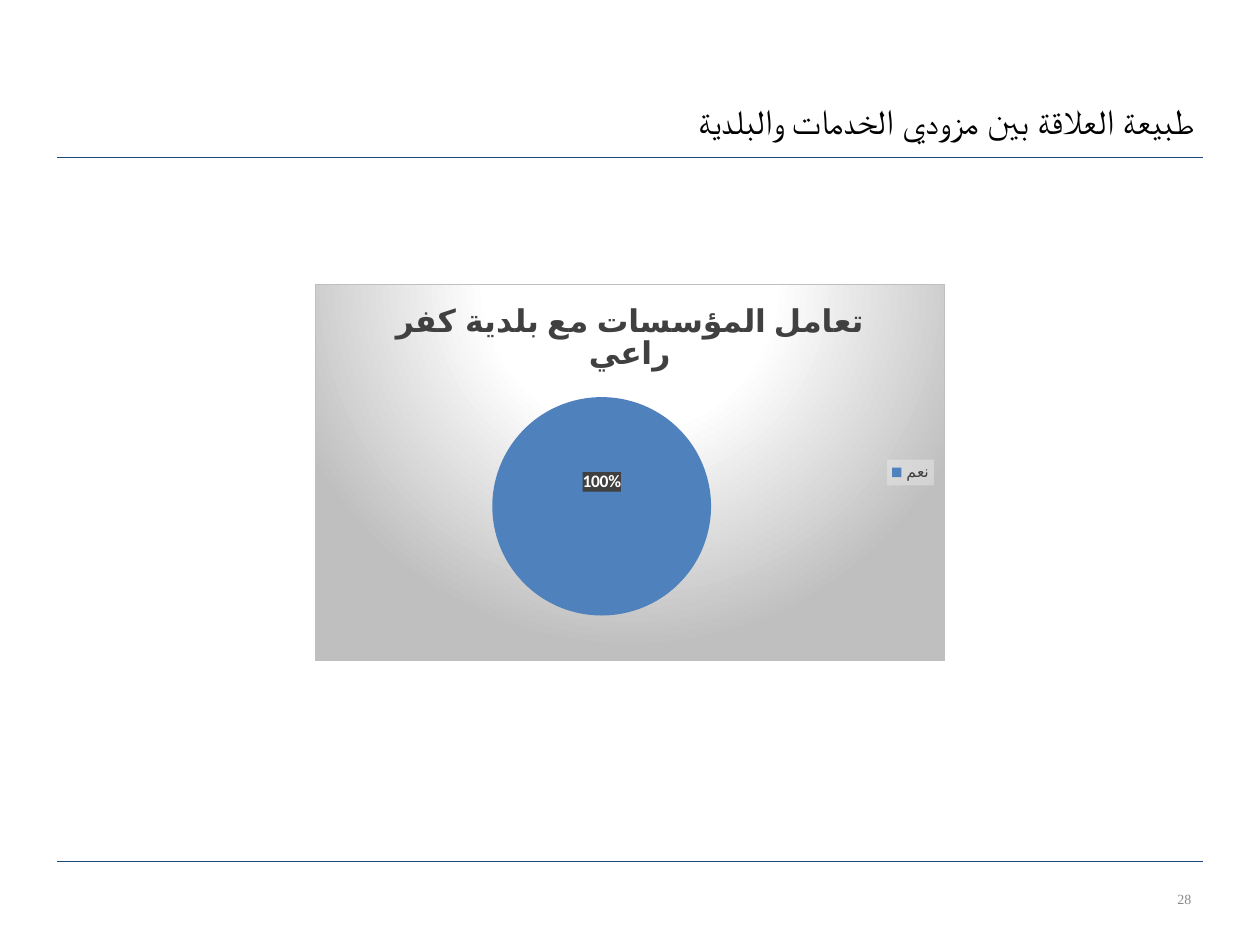
import lxml.etree
import pptx
import pptx.chart.data
import pptx.dml.color
import pptx.enum.chart
import pptx.enum.shapes
import pptx.enum.text
import pptx.oxml
import pptx.oxml.ns
import pptx.util

Pt = pptx.util.Pt
qn = pptx.oxml.ns.qn
NAMESPACES = pptx.oxml.ns.nsdecls("a", "c")


def color(hex_string):
    """Return the colour for a hex string."""
    return pptx.dml.color.RGBColor.from_string(hex_string)


def format_font(font, name, size, hex_color, bold=False):
    """Set the face, size, colour and weight of a font."""
    font.name, font.size, font.bold = name, Pt(size), bold
    font.color.rgb = color(hex_color)


def write_text(frame, text, *, name, size, hex_color, bold=False, align=None, rtl=False):
    """Put one formatted paragraph into a text frame."""
    paragraph = frame.paragraphs[0]
    paragraph.alignment = align
    if rtl:
        paragraph._p.get_or_add_pPr().set("rtl", "1")
    run = paragraph.add_run()
    run.text = text
    format_font(run.font, name, size, hex_color, bold)


def place(shape, left, top, width, height):
    """Position a shape in points."""
    shape.left, shape.top = Pt(left), Pt(top)
    shape.width, shape.height = Pt(width), Pt(height)


def add_rule(slide, top):
    """Draw a thin line across the slide."""
    line = slide.shapes.add_connector(
        pptx.enum.shapes.MSO_CONNECTOR.STRAIGHT, Pt(32.4), Pt(top), Pt(687.6), Pt(top))
    line.line.color.rgb = color("1F497D")
    line.line.width = Pt(0.75)
    lxml.etree.SubElement(line._element.spPr, qn("a:effectLst"))


def add_title(slide, text):
    """Fill the title placeholder with right-to-left text."""
    title = slide.shapes.title
    place(title, 166.3, 20.9, 523.4, 63.4)
    title.text_frame.vertical_anchor = pptx.enum.text.MSO_ANCHOR.BOTTOM
    write_text(title.text_frame, text, name="Arial", size=20, hex_color="000000",
               align=pptx.enum.text.PP_ALIGN.RIGHT, rtl=True)


def add_page_number(slide, text):
    """Add the page number in the bottom corner."""
    box = slide.shapes.add_textbox(Pt(622.4), Pt(497.9), Pt(65.5), Pt(31.7))
    box.text_frame.word_wrap = True
    box.text_frame.vertical_anchor = pptx.enum.text.MSO_ANCHOR.MIDDLE
    write_text(box.text_frame, text, name="Times New Roman", size=8,
               hex_color="898989", align=pptx.enum.text.PP_ALIGN.RIGHT)


def add_after(element, content, tag="spPr"):
    """Insert a chart element with the given content behind another."""
    element.addnext(pptx.oxml.parse_xml(f"<c:{tag} {NAMESPACES}>{content}</c:{tag}>"))


def manual_layout(**values):
    """Return the XML of a manual chart layout."""
    items = "".join(f'<c:{key} val="{value}"/>' for key, value in values.items())
    return f"<c:manualLayout>{items}</c:manualLayout>"


def solid_fill(hex_color, opacity):
    """Return the XML of a fill with an opacity in percent."""
    return (f'<a:solidFill><a:srgbClr val="{hex_color}">'
            f'<a:alpha val="{opacity * 1000}"/></a:srgbClr></a:solidFill>')


def radial_fill(stops):
    """Return the XML of a circular gradient centred in the upper half."""
    stop_list = "".join(f'<a:gs pos="{position * 1000}"><a:srgbClr val="{hex_color}"/></a:gs>'
                        for position, hex_color in stops)
    return (f'<a:gradFill><a:gsLst>{stop_list}</a:gsLst><a:path path="circle">'
            '<a:fillToRect l="50000" t="-80000" r="50000" b="180000"/></a:path></a:gradFill>')


def label_slice(series):
    """Show the percentage of the slice above its middle."""
    labels = series.data_labels
    labels.show_percentage, labels.show_value = True, False
    labels.number_format, labels.number_format_is_linked = "0%", False
    label = series.points[0].data_label
    label.position = labels.position = pptx.enum.chart.XL_LABEL_POSITION.CENTER
    for font in (labels.font, label.font):
        format_font(font, "Calibri", 10, "FFFFFF", bold=True)
    background = solid_fill("404040", 90)
    add_after(labels._element.find(qn("c:numFmt")), background)
    element = labels._element.find(qn("c:dLbl"))
    index = element.find(qn("c:idx"))
    add_after(index, background)
    add_after(index, manual_layout(x=0, y=-0.21), tag="layout")
    element.find(qn("c:showVal")).set("val", "0")
    element.find(qn("c:showPercent")).set("val", "1")


def add_pie(slide, title, category, value):
    """Add the pie chart with its title, legend and percentage label."""
    data = pptx.chart.data.CategoryChartData()
    data.categories = [category]
    data.add_series("Series 1", [value])
    chart = slide.shapes.add_chart(
        pptx.enum.chart.XL_CHART_TYPE.PIE, Pt(180), Pt(162), Pt(360), Pt(216), data).chart
    format_font(chart.font, "Calibri", 10, "000000")
    border = '<a:ln w="9525"><a:solidFill><a:srgbClr val="BFBFBF"/></a:solidFill></a:ln>'
    add_after(chart._chartSpace.find(qn("c:chart")),
              radial_fill([(0, "FFFFFF"), (39, "FFFFFF"), (100, "BFBFBF")]) + border)

    chart.has_title = True
    write_text(chart.chart_title.text_frame, title, name="Calibri", size=18,
               hex_color="404040", bold=True)
    chart.chart_title.include_in_layout = False

    chart.has_legend = True
    chart.legend.position = pptx.enum.chart.XL_LEGEND_POSITION.RIGHT
    chart.legend.include_in_layout = False
    format_font(chart.legend.font, "Calibri", 9, "404040")
    add_after(chart.legend._element.find(qn("c:overlay")), solid_fill("F2F2F2", 39))

    plot = chart.plots[0]
    plot.vary_by_categories = True
    plot_area = plot._element.getparent()
    for layout in plot_area.findall(qn("c:layout")):
        plot_area.remove(layout)
    layout = pptx.oxml.parse_xml(f"<c:layout {NAMESPACES}>" + manual_layout(
        layoutTarget="inner", xMode="edge", yMode="edge", x=0.28, y=0.3, w=0.35, h=0.58)
        + "</c:layout>")
    plot_area.insert(0, layout)
    point = plot.series[0].points[0]
    point.format.fill.solid()
    point.format.fill.fore_color.rgb = color("4F81BD")
    label_slice(plot.series[0])


def main():
    """Build and save the slide."""
    presentation = pptx.Presentation()
    presentation.slide_width, presentation.slide_height = Pt(720), Pt(540)
    slide = presentation.slides.add_slide(presentation.slide_layouts[5])
    for top in (492.2, 90):
        add_rule(slide, top)
    add_page_number(slide, "28")
    add_title(slide, "طبيعة العلاقة بين مزودي الخدمات والبلدية")
    add_pie(slide, "تعامل المؤسسات مع بلدية كفر راعي", "نعم", 100)
    presentation.save("out.pptx")


if __name__ == "__main__":
    main()
